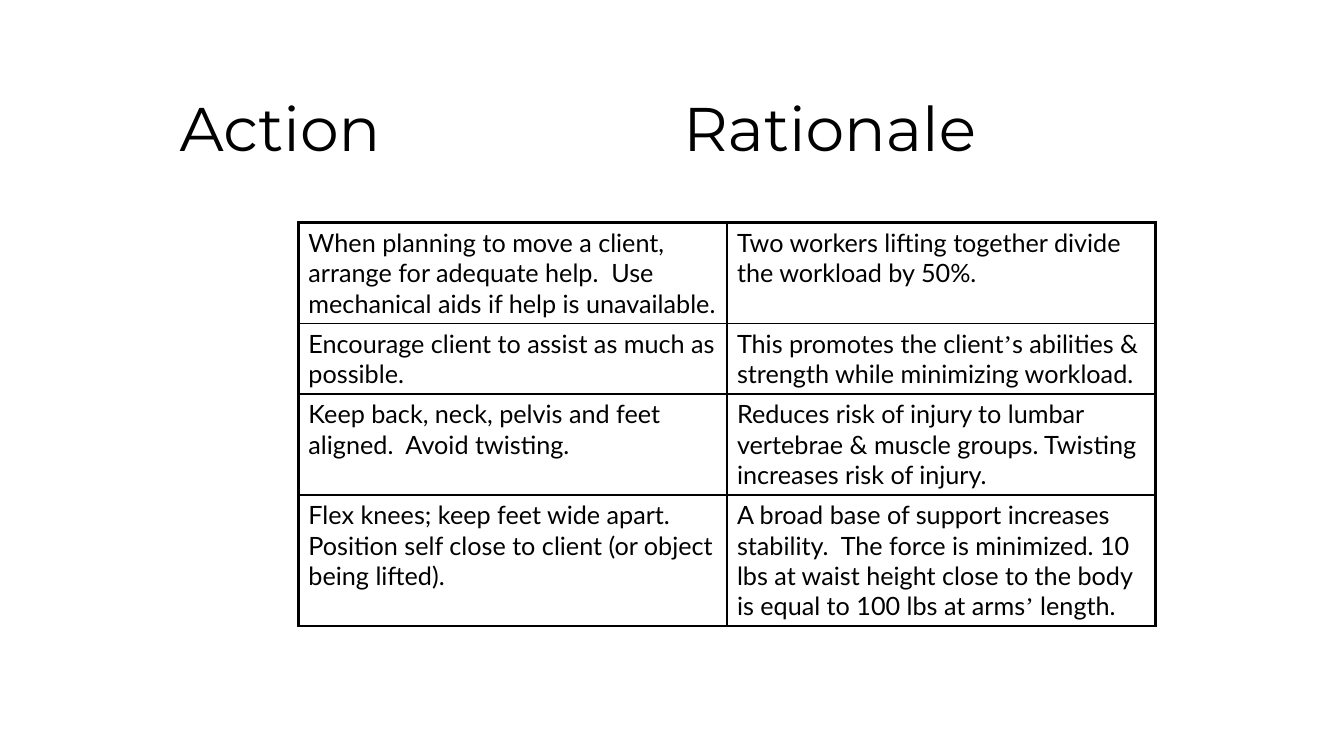
from dataclasses import dataclass

from lxml.etree import SubElement
from pptx import Presentation
from pptx.dml.color import RGBColor
from pptx.enum.text import MSO_ANCHOR, MSO_AUTO_SIZE, PP_ALIGN
from pptx.oxml.ns import qn
from pptx.slide import Slide
from pptx.table import _Cell as Cell
from pptx.text.text import TextFrame
from pptx.util import Cm, Pt

BLACK = RGBColor(0x00, 0x00, 0x00)
TITLE_FONT, BODY_FONT, APOSTROPHE_FONT = "Montserrat", "Lato", "Times New Roman"
APOSTROPHE = "’"
OUTER_LINE, INNER_LINE = Pt(2.25), Pt(1)
COLUMN_WIDTH, ROW_HEIGHT = Cm(10.8), Cm(1.63)


@dataclass(frozen=True)
class Guideline:
    action: str
    rationale: str


GUIDELINES = [
    Guideline(
        "When planning to move a client, arrange for adequate help.  "
        "Use mechanical aids if help is unavailable.",
        "Two workers lifting together divide the workload by 50%.",
    ),
    Guideline(
        "Encourage client to assist as much as possible.",
        "This promotes the client’s abilities & strength while minimizing workload.",
    ),
    Guideline(
        "Keep back, neck, pelvis and feet aligned.  Avoid twisting.",
        "Reduces risk of injury to lumbar vertebrae & muscle groups. "
        "Twisting increases risk of injury.",
    ),
    Guideline(
        "Flex knees; keep feet wide apart.  Position self close to client "
        "(or object being lifted).",
        "A broad base of support increases stability.  The force is minimized. "
        "10 lbs at waist height close to the body is equal to 100 lbs at arms’ length.",
    ),
]


def write_text(frame: TextFrame, text: str, *, font: str, size: float,
               line_spacing: float = 1.0, tab_stop: int | None = None) -> None:
    """Fill the first paragraph, setting apostrophes in their own font."""
    paragraph = frame.paragraphs[0]
    paragraph.alignment = PP_ALIGN.LEFT
    paragraph.line_spacing = line_spacing
    if tab_stop is not None:
        tabs = SubElement(paragraph._p.get_or_add_pPr(), qn("a:tabLst"))
        SubElement(tabs, qn("a:tab"), pos=str(tab_stop), algn="l")
    before, mark, after = text.partition(APOSTROPHE)
    for part in filter(None, (before, mark, after)):
        run = paragraph.add_run()
        run.text = part
        run.font.name = APOSTROPHE_FONT if part == APOSTROPHE else font
        run.font.size = Pt(size)
        run.font.bold = False
        run.font.color.rgb = BLACK


def set_borders(cell: Cell, widths: dict[str, int]) -> None:
    properties = cell._tc.get_or_add_tcPr()
    for side, width in widths.items():
        line = SubElement(properties, qn(f"a:ln{side}"), w=str(width))
        fill = SubElement(line, qn("a:solidFill"))
        SubElement(fill, qn("a:srgbClr"), val=str(BLACK))


def add_heading(slide: Slide) -> None:
    title = slide.shapes.title
    title.left, title.top, title.width, title.height = Cm(4.27), Cm(1.73), Cm(28.85), Cm(3.18)
    frame = title.text_frame
    frame.word_wrap = True
    frame.auto_size = MSO_AUTO_SIZE.NONE
    frame.vertical_anchor = MSO_ANCHOR.MIDDLE
    write_text(frame, "Action\tRationale", font=TITLE_FONT, size=44,
               line_spacing=0.9, tab_stop=Cm(12.7))


def add_guidelines(slide: Slide, guidelines: list[Guideline]) -> None:
    last_row = len(guidelines) - 1
    table = slide.shapes.add_table(
        len(guidelines), 2, Cm(7.52), Cm(5.61),
        2 * COLUMN_WIDTH, len(guidelines) * ROW_HEIGHT).table
    table.first_row = table.horz_banding = False
    for row, guideline in enumerate(guidelines):
        for column, text in enumerate((guideline.action, guideline.rationale)):
            cell = table.cell(row, column)
            outer_sides = {"L": column == 0, "R": column == 1,
                           "T": row == 0, "B": row == last_row}
            set_borders(cell, {side: OUTER_LINE if outer else INNER_LINE
                               for side, outer in outer_sides.items()})
            cell.fill.background()
            cell.vertical_anchor = MSO_ANCHOR.TOP
            write_text(cell.text_frame, text, font=BODY_FONT, size=18)


def main() -> None:
    presentation = Presentation()
    presentation.slide_width, presentation.slide_height = Cm(33.87), Cm(19.05)
    slide = presentation.slides.add_slide(presentation.slide_layouts.get_by_name("Title Only"))
    add_heading(slide)
    add_guidelines(slide, GUIDELINES)
    presentation.save("out.pptx")


if __name__ == "__main__":
    main()
